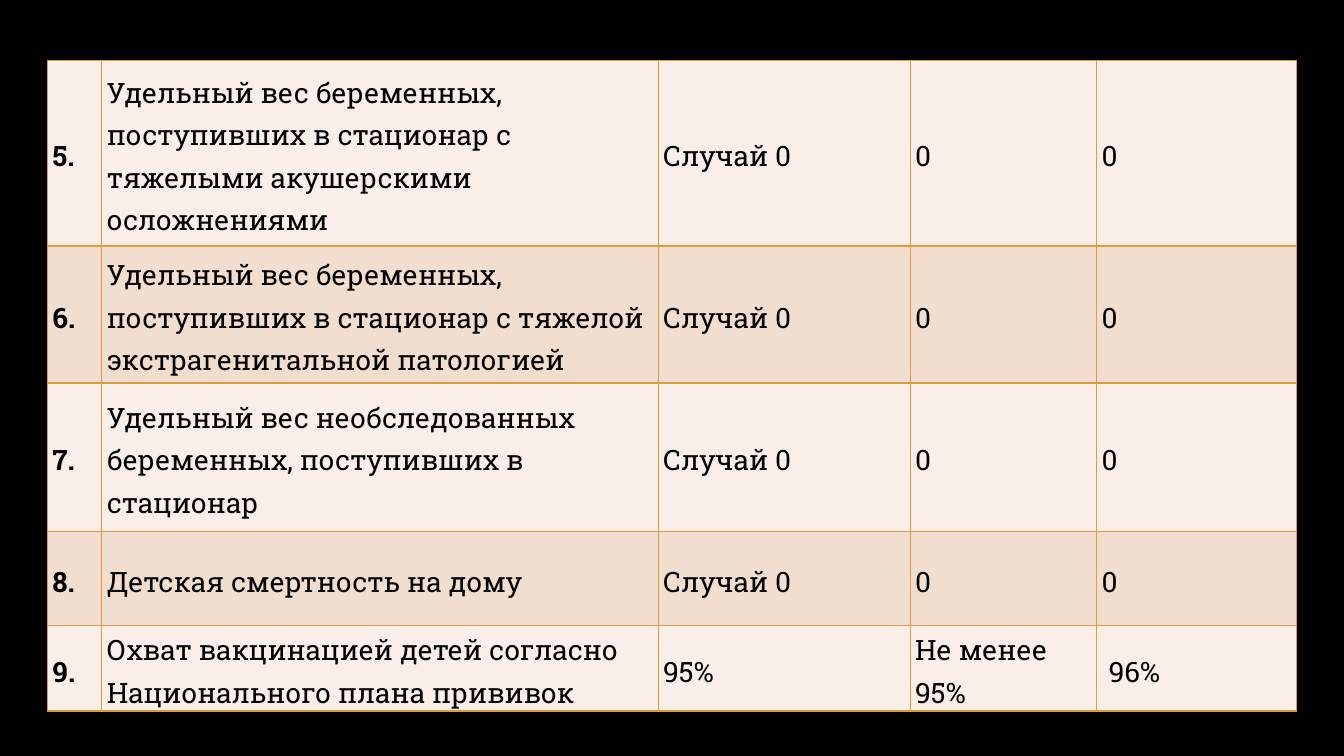
from dataclasses import dataclass

from lxml import etree
from pptx import Presentation
from pptx.dml.color import RGBColor
from pptx.enum.text import MSO_ANCHOR, PP_ALIGN
from pptx.oxml.ns import qn
from pptx.util import Pt

MIDDLE = MSO_ANCHOR.MIDDLE
LEFT = PP_ALIGN.LEFT
JUSTIFY = PP_ALIGN.JUSTIFY


@dataclass(frozen=True)
class Theme:
    back: str = "000000"
    ink: str = "000000"
    bands: tuple = ("F9EFE8", "F2DECE")
    rule: str = "DE9C3C"
    font: str = "Roboto Slab"
    size: float = 20
    line: float = 1
    space: float = 1.15
    inset: float = 3.6


WIDTHS = (38.9, 397.4, 180, 133.2, 142.6)
HEIGHTS = (132.5, 97.9, 105.8, 67.7, 57.6)
ROWS = (
    ("5.", "Удельный вес беременных, поступивших в стационар с тяжелыми "
     "акушерскими осложнениями", "Случай 0", "0", "0"),
    ("6.", "Удельный вес беременных, поступивших в стационар с тяжелой "
     "экстрагенитальной патологией", "Случай 0", "0", "0"),
    ("7.", "Удельный вес необследованных беременных, поступивших в стационар",
     "Случай 0", "0", "0"),
    ("8.", "Детская смертность на дому", "Случай 0", "0", "0"),
    ("9.", "Охват вакцинацией детей согласно Национального плана прививок",
     "95%", "Не менее 95%", " 96%"),
)
JUSTIFIED = {(3, 1)}


class Deck:
    def __init__(self, theme):
        self.theme = theme
        self.file = Presentation()
        self.file.slide_width, self.file.slide_height = Pt(960), Pt(540)
        self.slide = self.file.slides.add_slide(self.file.slide_layouts[6])
        self.paint(self.slide.background.fill, theme.back)

    def paint(self, fill, color):
        fill.solid()
        fill.fore_color.rgb = RGBColor.from_string(color)

    def frame(self, cell):
        """Draw a thin rule on all four sides of a cell."""
        props = cell._tc.get_or_add_tcPr()
        for side in ("a:lnL", "a:lnR", "a:lnT", "a:lnB"):
            line = etree.SubElement(props, qn(side), w=str(Pt(self.theme.line)))
            fill = etree.SubElement(line, qn("a:solidFill"))
            etree.SubElement(fill, qn("a:srgbClr"), val=self.theme.rule)

    def label(self, cell, text, bold, align):
        theme = self.theme
        cell.vertical_anchor = MIDDLE
        cell.margin_left = cell.margin_right = Pt(theme.inset)
        cell.margin_top = cell.margin_bottom = 0
        cell.text_frame.text = text
        para = cell.text_frame.paragraphs[0]
        para.alignment = align
        para.line_spacing = theme.space
        font = para.runs[0].font
        font.name, font.size, font.bold = theme.font, Pt(theme.size), bold
        font.color.rgb = RGBColor.from_string(theme.ink)

    def table(self, left, top, widths, heights, rows):
        grid = self.slide.shapes.add_table(
            len(rows), len(widths), Pt(left), Pt(top),
            Pt(sum(widths)), Pt(sum(heights))).table
        grid.first_row = grid.horz_banding = False
        for column, width in zip(grid.columns, widths):
            column.width = Pt(width)
        for i, (height, texts) in enumerate(zip(heights, rows)):
            grid.rows[i].height = Pt(height)
            band = self.theme.bands[i % 2]
            for j, text in enumerate(texts):
                cell = grid.cell(i, j)
                align = JUSTIFY if (i, j) in JUSTIFIED else LEFT
                self.label(cell, text, j == 0, align)
                self.frame(cell)
                self.paint(cell.fill, band)


def main():
    deck = Deck(Theme())
    deck.table(33.84, 43.2, WIDTHS, HEIGHTS, ROWS)
    deck.file.save("out.pptx")


if __name__ == "__main__":
    main()
